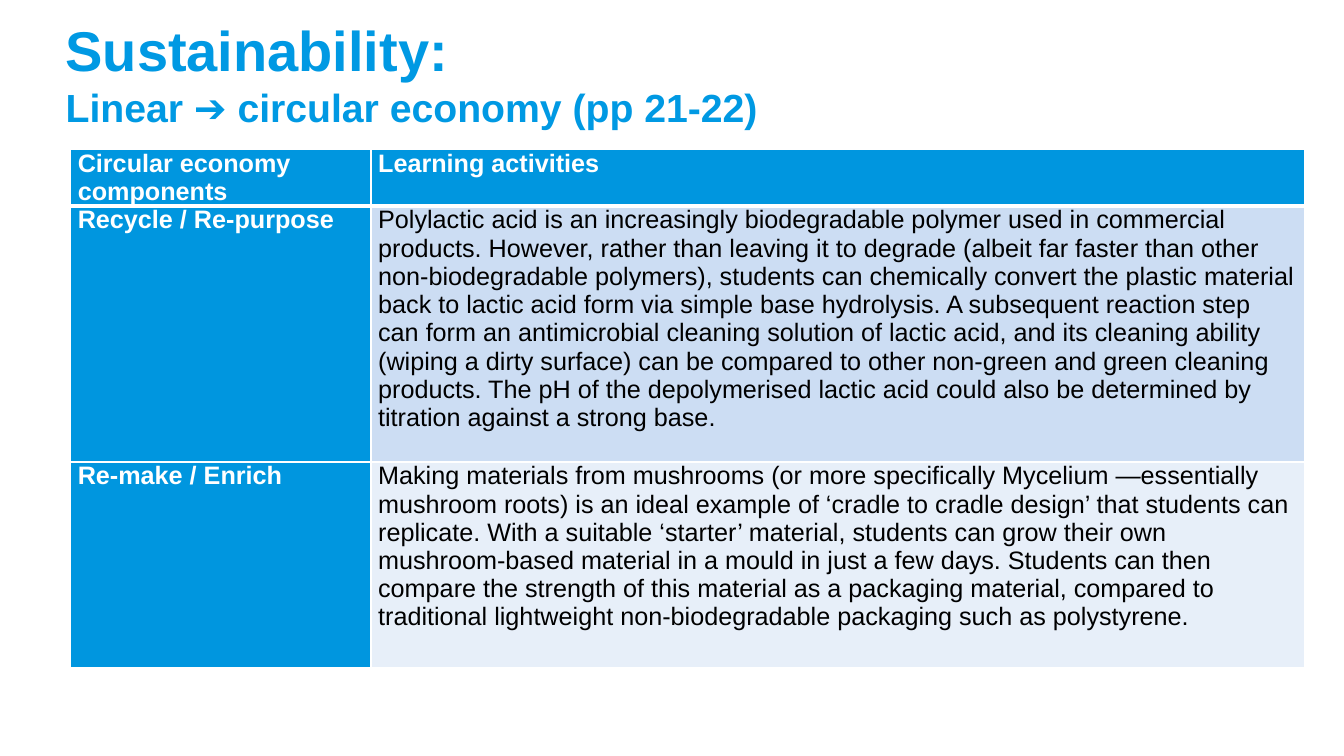
from dataclasses import dataclass

from lxml import etree
from pptx import Presentation
from pptx import util as u
from pptx.dml.color import RGBColor
from pptx.enum import text
from pptx.oxml import ns


@dataclass(frozen=True)
class Theme:
    font: str = "Arial"
    heading: str = "0099E3"
    accent: str = "0096DF"
    light: str = "FFFFFF"
    dark: str = "000000"
    bands: tuple = ("CCDDF3", "E7EFF9")
    title_size: int = 40
    subtitle_size: int = 28
    cell_size: int = 18


class SlideBuilder:
    def __init__(self, deck, theme):
        self.theme = theme
        self.slide = deck.slides.add_slide(deck.slide_layouts[5])

    def style(self, run, size, colour, bold):
        formats = {"name": self.theme.font, "size": u.Pt(size), "bold": bold}
        for key, value in formats.items():
            setattr(run.font, key, value)
        run.font.color.rgb = RGBColor.from_string(colour)

    def place(self, target, left, top, width, height):
        bounds = {"left": left, "top": top, "width": width, "height": height}
        for key, value in bounds.items():
            setattr(target, key, u.Cm(value))

    def title(self, heading, subtitle, bounds):
        holder = self.slide.shapes.title
        self.place(holder, *bounds)
        frame = holder.text_frame
        frame.word_wrap = True
        frame.auto_size = text.MSO_AUTO_SIZE.NONE
        frame.vertical_anchor = text.MSO_ANCHOR.MIDDLE
        line = frame.paragraphs[0]
        line.alignment = text.PP_ALIGN.LEFT
        for words, size in ((heading, self.theme.title_size), (subtitle, self.theme.subtitle_size)):
            if line.runs:
                line.add_line_break()
            run = line.add_run()
            run.text = words
            self.style(run, size, self.theme.heading, True)

    def borders(self, cell, widths):
        properties = cell._tc.get_or_add_tcPr()
        for side, width in widths.items():
            edge = etree.SubElement(properties, ns.qn(f"a:ln{side}"), w=str(u.Pt(width)))
            fill = etree.SubElement(edge, ns.qn("a:solidFill"))
            etree.SubElement(fill, ns.qn("a:srgbClr"), val=self.theme.light)

    def cell(self, cell, words, fill, colour, bold, widths):
        self.borders(cell, widths)
        cell.fill.solid()
        cell.fill.fore_color.rgb = RGBColor.from_string(fill)
        margins = {"margin_left": 0.18, "margin_right": 0.18, "margin_top": 0, "margin_bottom": 0}
        for key, value in margins.items():
            setattr(cell, key, u.Cm(value))
        paragraph = cell.text_frame.paragraphs[0]
        paragraph.space_after = u.Pt(6)
        run = paragraph.add_run()
        run.text = words
        self.style(run, self.theme.cell_size, colour, bold)

    def table(self, rows, left, top, columns, heights):
        bounds = [u.Cm(n) for n in (left, top, sum(columns), sum(heights))]
        grid = self.slide.shapes.add_table(len(rows), len(columns), *bounds).table
        for column, width in zip(grid.columns, columns):
            column.width = u.Cm(width)
        for r, (row, height) in enumerate(zip(rows, heights)):
            grid.rows[r].height = u.Cm(height)
            widths = {"L": 1, "R": 1, "T": 3 if r == 1 else 1, "B": 3 if r == 0 else 1}
            for c, words in enumerate(row):
                label = r == 0 or c == 0
                fill = self.theme.accent if label else self.theme.bands[r - 1]
                colour = self.theme.light if label else self.theme.dark
                self.cell(grid.cell(r, c), words, fill, colour, label, widths)


ACTIVITIES = [
    ("Circular economy components", "Learning activities"),
    (
        "Recycle / Re-purpose",
        "Polylactic acid is an increasingly biodegradable polymer used in commercial products. "
        "However, rather than leaving it to degrade (albeit far faster than other "
        "non-biodegradable polymers), students can chemically convert the plastic material back "
        "to lactic acid form via simple base hydrolysis. A subsequent reaction step can form an "
        "antimicrobial cleaning solution of lactic acid, and its cleaning ability (wiping a dirty "
        "surface) can be compared to other non-green and green cleaning products. The pH of the "
        "depolymerised lactic acid could also be determined by titration against a strong base.",
    ),
    (
        "Re-make / Enrich",
        "Making materials from mushrooms (or more specifically Mycelium —essentially mushroom "
        "roots) is an ideal example of ‘cradle to cradle design’ that students can replicate. "
        "With a suitable ‘starter’ material, students can grow their own mushroom-based material "
        "in a mould in just a few days. Students can then compare the strength of this material "
        "as a packaging material, compared to traditional lightweight non-biodegradable packaging "
        "such as polystyrene.",
    ),
]


def main():
    deck = Presentation()
    deck.slide_width, deck.slide_height = u.Cm(33.87), u.Cm(19.05)
    builder = SlideBuilder(deck, Theme())
    builder.title("Sustainability:", "Linear ➔ circular economy (pp 21-22)", (1.4, 0.25, 31.67, 3.18))
    builder.table(ACTIVITIES, 1.78, 3.77, (7.57, 23.52), (1.3, 6.45, 5.18))
    deck.save("out.pptx")


if __name__ == "__main__":
    main()
